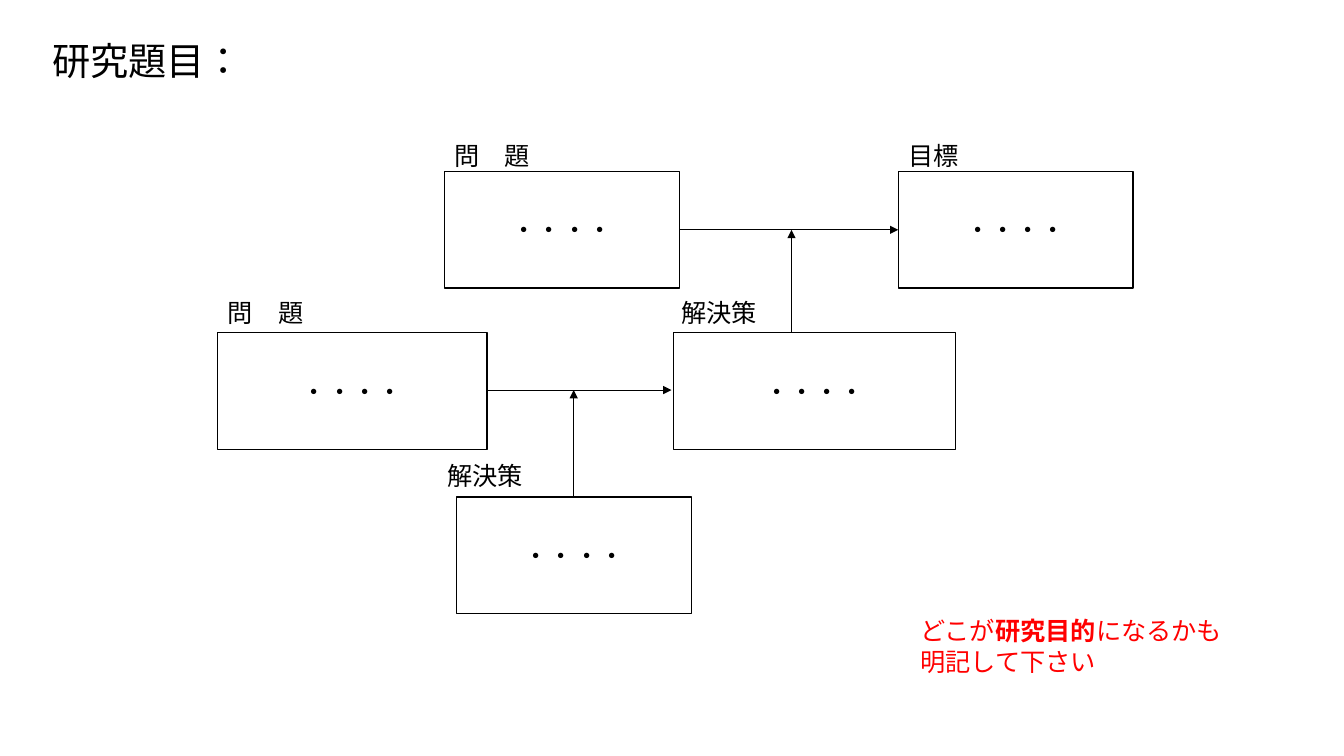
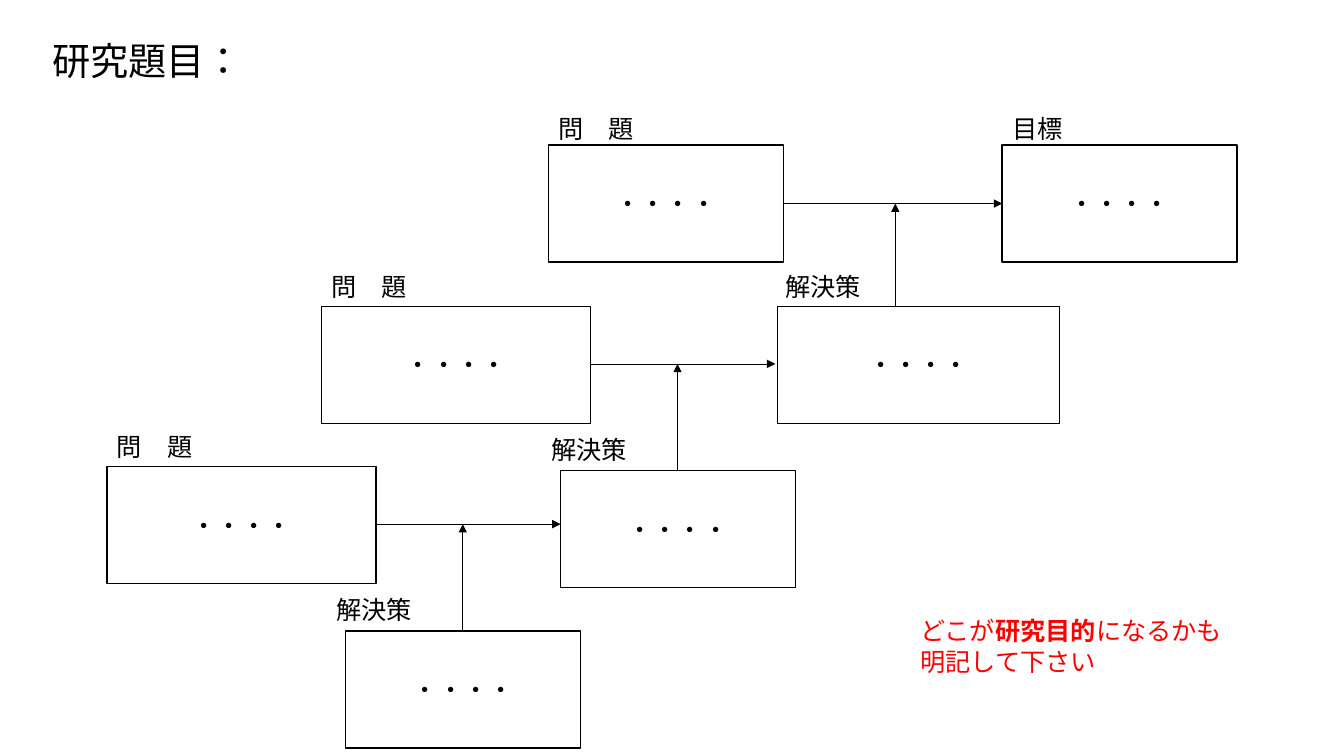
"""Build two slides that break a research goal into problems and solutions."""
from dataclasses import dataclass
from typing import Any, NamedTuple

from lxml import etree
from pptx import Presentation
from pptx.dml.color import RGBColor
from pptx.enum.lang import MSO_LANGUAGE_ID
from pptx.enum.shapes import MSO_CONNECTOR, MSO_SHAPE
from pptx.enum.text import MSO_ANCHOR, MSO_AUTO_SIZE, PP_ALIGN
from pptx.oxml.ns import qn
from pptx.slide import Slide
from pptx.util import Inches, Pt

STRAIGHT = MSO_CONNECTOR.STRAIGHT
RECTANGLE = MSO_SHAPE.RECTANGLE
MIDDLE = MSO_ANCHOR.MIDDLE
TOP = MSO_ANCHOR.TOP
CENTER = PP_ALIGN.CENTER
LEFT = PP_ALIGN.LEFT
GROW = MSO_AUTO_SIZE.SHAPE_TO_FIT_TEXT
FIXED = MSO_AUTO_SIZE.NONE
JAPANESE = MSO_LANGUAGE_ID.JAPANESE


@dataclass(frozen=True)
class Theme:
    """Colours, type sizes and line widths shared by the slides."""
    font: str = "Noto Sans CJK JP"
    ink: RGBColor = RGBColor(0, 0, 0)
    paper: RGBColor = RGBColor(255, 255, 255)
    alert: RGBColor = RGBColor(255, 0, 0)
    title_size: float = 27.3
    body_size: float = 18
    border: float = 1
    arrow: float = 0.5


class Run(NamedTuple):
    """A piece of text in one weight."""
    text: str
    bold: bool = False


class Point(NamedTuple):
    """A place or a shift, in inches."""
    x: float
    y: float

    def plus(self, other: "Point") -> "Point":
        """Return this point moved by another."""
        return Point(self.x + other.x, self.y + other.y)


class Card(NamedTuple):
    """A box with a heading placed relative to its top left corner."""
    heading: str
    corner: Point
    width: float
    heading_offset: Point


class Step(NamedTuple):
    """A problem whose arrow is met from below by a solution."""
    problem: Card
    solution: Card
    arrow_end: float
    arrow_drop: float
    riser: float


THEME = Theme()
CARD_HEIGHT = 1.16
NARROW, MEDIUM, WIDE = 2.33, 2.67, 2.8
HEADING_HEIGHT = 0.4
PROBLEM, SOLUTION, TARGET = "問　題", "解決策", "目標"
HEADING_WIDTHS = {PROBLEM: 0.96, SOLUTION: 0.96, TARGET: 0.71}
PLACEHOLDER = "・・・・"
TITLE = "研究題目："
NOTE = [
    [Run("どこが"), Run("研究目的", True), Run("になるかも")],
    [Run("明記して下さい")],
]

GOAL = Card(TARGET, Point(8.91, 1.7), NARROW, Point(0, -0.36))
UPPER_STEP = Step(
    Card(PROBLEM, Point(4.41, 1.7), NARROW, Point(0, -0.36)),
    Card(SOLUTION, Point(6.68, 3.3), WIDE, Point(-0.02, -0.4)),
    arrow_end=8.91, arrow_drop=0.58, riser=7.85,
)
LOWER_STEP = Step(
    Card(PROBLEM, Point(2.16, 3.3), MEDIUM, Point(0, -0.4)),
    Card(SOLUTION, Point(4.53, 4.93), NARROW, Point(-0.19, -0.41)),
    arrow_end=6.66, arrow_drop=0.57, riser=5.69,
)
NO_SHIFT = Point(0, 0)
DIAGRAM_SHIFT = Point(1.03, -0.26)
STEP_SHIFT = Point(-2.13, 1.59)


def apply(target: Any, values: dict[str, Any]) -> None:
    """Set each named attribute on the target."""
    for name, value in values.items():
        setattr(target, name, value)


def write(frame: Any, lines: list[list[Run]], size: float, color: RGBColor,
          align: Any = LEFT, spacing: float = 1.0) -> None:
    """Fill a text frame with styled paragraphs."""
    for index, runs in enumerate(lines):
        paragraph = frame.add_paragraph() if index else frame.paragraphs[0]
        apply(paragraph, {"alignment": align, "line_spacing": spacing})
        for piece in runs:
            run = paragraph.add_run()
            run.text = piece.text
            apply(run.font, {"name": THEME.font, "size": Pt(size),
                             "bold": piece.bold, "language_id": JAPANESE})
            run.font.color.rgb = color
            etree.SubElement(run.font._element, qn("a:ea"), typeface=THEME.font)


def add_text(slide: Slide, corner: Point, width: float, height: float,
             lines: list[list[Run]], size: float = THEME.body_size,
             color: RGBColor = THEME.ink, spacing: float = 1.0,
             **frame_format: Any) -> None:
    """Add a text box, by default unwrapped and growing with its text."""
    box = slide.shapes.add_textbox(
        Inches(corner.x), Inches(corner.y), Inches(width), Inches(height))
    defaults = {"word_wrap": False, "auto_size": GROW, "vertical_anchor": TOP}
    apply(box.text_frame, defaults | frame_format)
    write(box.text_frame, lines, size, color, spacing=spacing)


def add_card(slide: Slide, card: Card, shift: Point) -> None:
    """Draw a card and its heading."""
    corner = card.corner.plus(shift)
    box = slide.shapes.add_shape(
        RECTANGLE, Inches(corner.x), Inches(corner.y),
        Inches(card.width), Inches(CARD_HEIGHT))
    box.shadow.inherit = False
    box.fill.solid()
    box.fill.fore_color.rgb = THEME.paper
    box.line.color.rgb = THEME.ink
    box.line.width = Pt(THEME.border)
    box.text_frame.vertical_anchor = MIDDLE
    write(box.text_frame, [[Run(PLACEHOLDER)]], THEME.body_size, THEME.ink, CENTER)
    add_text(slide, corner.plus(card.heading_offset),
             HEADING_WIDTHS[card.heading], HEADING_HEIGHT, [[Run(card.heading)]])


def add_arrow(slide: Slide, start: Point, end: Point) -> None:
    """Draw a thin arrow between two points."""
    arrow = slide.shapes.add_connector(
        STRAIGHT, Inches(start.x), Inches(start.y), Inches(end.x), Inches(end.y))
    arrow.line.color.rgb = THEME.ink
    arrow.line.width = Pt(THEME.arrow)
    etree.SubElement(arrow.line._get_or_add_ln(), qn("a:tailEnd"), type="triangle")
    etree.SubElement(arrow._element.spPr, qn("a:effectLst"))


def add_step(slide: Slide, step: Step, shift: Point) -> None:
    """Draw a problem, its solution and the arrows that join them."""
    problem, solution = step.problem, step.solution
    arrow_y = problem.corner.y + step.arrow_drop
    add_card(slide, problem, shift)
    add_card(slide, solution, shift)
    add_arrow(slide, Point(problem.corner.x + problem.width, arrow_y).plus(shift),
              Point(step.arrow_end, arrow_y).plus(shift))
    add_arrow(slide, Point(step.riser, solution.corner.y).plus(shift),
              Point(step.riser, arrow_y).plus(shift))


def add_diagram(deck: Any, shift: Point, extra_steps: int) -> None:
    """Add a slide with the goal, both main steps and any further steps."""
    slide = deck.slides.add_slide(deck.slide_layouts[6])
    add_text(slide, Point(0.42, 0.33), 12.66, 0.6, [[Run(TITLE)]],
             THEME.title_size, spacing=0.9, word_wrap=True,
             auto_size=FIXED, vertical_anchor=MIDDLE)
    add_card(slide, GOAL, shift)
    add_step(slide, UPPER_STEP, shift)
    for level in range(extra_steps + 1):
        descent = Point(STEP_SHIFT.x * level, STEP_SHIFT.y * level)
        add_step(slide, LOWER_STEP, shift.plus(descent))
    add_text(slide, Point(9.03, 6.06), 3.23, 0.71, NOTE, color=THEME.alert)


def main() -> None:
    """Build and save the deck."""
    deck = Presentation()
    apply(deck, {"slide_width": Inches(13.33), "slide_height": Inches(7.5)})
    add_diagram(deck, NO_SHIFT, extra_steps=0)
    add_diagram(deck, DIAGRAM_SHIFT, extra_steps=1)
    deck.save("out.pptx")


if __name__ == "__main__":
    main()
